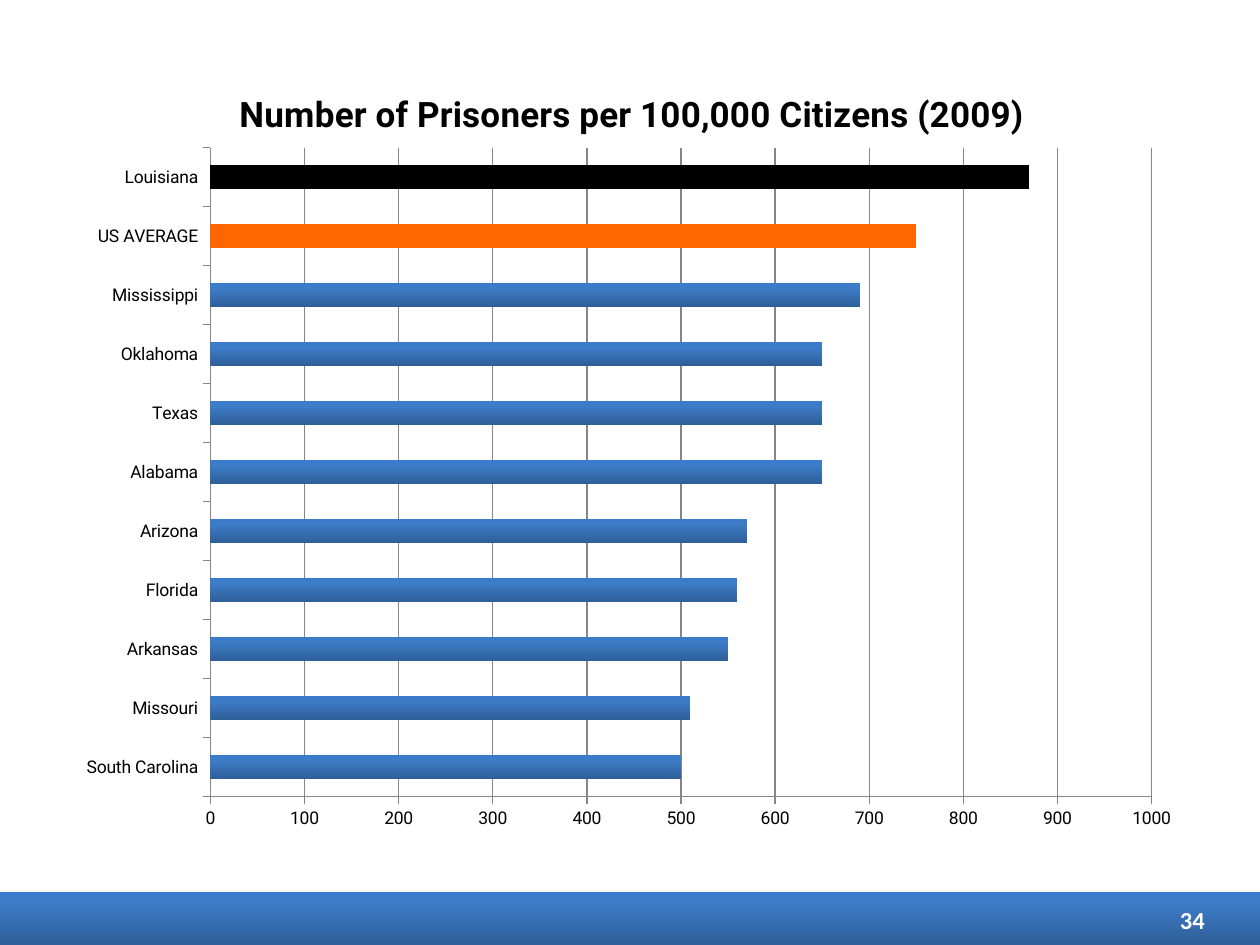
import typing

import pptx
import pptx.chart.data
import pptx.dml.color
import pptx.enum.chart
import pptx.enum.shapes
import pptx.enum.text
import pptx.oxml
import pptx.oxml.ns
import pptx.util

RGBColor = pptx.dml.color.RGBColor
Inches, Pt = pptx.util.Inches, pptx.util.Pt
qn, nsdecls = pptx.oxml.ns.qn, pptx.oxml.ns.nsdecls

BLACK = RGBColor(0x00, 0x00, 0x00)
WHITE = RGBColor(0xFF, 0xFF, 0xFF)
ORANGE = RGBColor(0xFF, 0x66, 0x00)
GRAY = RGBColor(0x86, 0x86, 0x86)
DEEP_BLUE = RGBColor(0x2F, 0x5F, 0x99)
MID_BLUE = RGBColor(0x3D, 0x7C, 0xC7)
LIGHT_BLUE = RGBColor(0x3A, 0x7C, 0xCB)
BLUE_STOPS = [(0, DEEP_BLUE), (80, MID_BLUE), (100, LIGHT_BLUE)]
FONT = "Roboto"


class StateRate(typing.NamedTuple):
    name: str
    prisoners: int
    color: typing.Optional[RGBColor] = None


# Listed from the bottom bar to the top bar
RATES = [
    StateRate("South Carolina", 500),
    StateRate("Missouri", 510),
    StateRate("Arkansas", 550),
    StateRate("Florida", 560),
    StateRate("Arizona", 570),
    StateRate("Alabama", 650),
    StateRate("Texas", 650),
    StateRate("Oklahoma", 650),
    StateRate("Mississippi", 690),
    StateRate("US AVERAGE", 750, ORANGE),
    StateRate("Louisiana", 870, BLACK),
]


def fill_blue_gradient(fill, spPr) -> None:
    """Vertical three-stop gradient, dark at the bottom."""
    fill.gradient()
    fill.gradient_angle = 90
    stops = spPr.find(qn("a:gradFill")).find(qn("a:gsLst"))
    for gs in list(stops):
        stops.remove(gs)
    for pos, color in BLUE_STOPS:
        stops.append(pptx.oxml.parse_xml(
            f'<a:gs {nsdecls("a")} pos="{pos * 1000}">'
            f'<a:srgbClr val="{color}"/></a:gs>'))


def place(parent, x: float, y: float, w: float = 0, h: float = 0) -> None:
    """Fix a chart part at fractions of the chart area."""
    old = parent.find(qn("c:layout"))
    if old is not None:
        parent.remove(old)
    target = '<c:layoutTarget val="inner"/>' if w else ""
    size = f'<c:w val="{w}"/><c:h val="{h}"/>' if w else ""
    layout = pptx.oxml.parse_xml(
        f'<c:layout {nsdecls("c")}><c:manualLayout>{target}'
        '<c:xMode val="edge"/><c:yMode val="edge"/>'
        f'<c:x val="{x}"/><c:y val="{y}"/>{size}</c:manualLayout></c:layout>')
    text = parent.find(qn("c:tx"))
    if text is not None:
        text.addnext(layout)
    else:
        parent.insert(0, layout)


def style_axis(axis) -> None:
    axis.major_tick_mark = pptx.enum.chart.XL_TICK_MARK.OUTSIDE
    axis.minor_tick_mark = pptx.enum.chart.XL_TICK_MARK.NONE
    axis.format.line.color.rgb = GRAY
    axis.format.line.width = Pt(0.75)


def add_footer(s) -> None:
    sp = s.shapes.add_shape(pptx.enum.shapes.MSO_SHAPE.RECTANGLE,
                            0, Inches(7.08), Inches(10), Inches(0.42))
    spPr = sp._element.spPr
    fill_blue_gradient(sp.fill, spPr)
    sp.line.fill.background()
    sp.shadow.inherit = False
    spPr.find(qn("a:effectLst")).append(pptx.oxml.parse_xml(
        f'<a:outerShdw {nsdecls("a")} blurRad="{Pt(3.1)}" dist="{Pt(1.8)}" '
        'dir="5400000" rotWithShape="0"><a:srgbClr val="000000">'
        '<a:alpha val="35000"/></a:srgbClr></a:outerShdw>'))

    # Slide number
    tf = s.shapes.add_textbox(Inches(7.33), Inches(7.1),
                              Inches(2.33), Inches(0.4)).text_frame
    tf.word_wrap = True
    tf.vertical_anchor = pptx.enum.text.MSO_ANCHOR.MIDDLE
    p = tf.paragraphs[0]
    p.alignment = pptx.enum.text.PP_ALIGN.RIGHT
    r = p.add_run()
    r.text = "34"
    r.font.name, r.font.size, r.font.bold = "Calibri", Pt(14), True
    r.font.color.rgb = WHITE


def add_prisoner_chart(s) -> None:
    data = pptx.chart.data.CategoryChartData()
    data.categories = [rate.name for rate in RATES]
    data.add_series("Series 1", [rate.prisoners for rate in RATES])
    chart = s.shapes.add_chart(
        pptx.enum.chart.XL_CHART_TYPE.BAR_CLUSTERED, Inches(0.5), Inches(0.42),
        Inches(9), Inches(6.28), data).chart
    chart.has_legend = False
    chart.font.name, chart.font.size = FONT, Pt(10)
    chart.font.color.rgb = BLACK

    # Title
    chart.has_title = True
    r = chart.chart_title.text_frame.paragraphs[0].add_run()
    r.text = "Number of Prisoners per 100,000 Citizens (2009)"
    r.font.name, r.font.size, r.font.bold = FONT, Pt(20), True
    r.font.color.rgb = BLACK
    place(chart.chart_title._element, 0.15, 0.04)

    # Axes
    style_axis(chart.category_axis)
    axis = chart.value_axis
    style_axis(axis)
    axis.minimum_scale, axis.maximum_scale, axis.major_unit = 0, 1000, 100
    axis.has_major_gridlines = True
    axis.major_gridlines.format.line.color.rgb = GRAY
    axis.major_gridlines.format.line.width = Pt(0.75)

    # Bars, with the highlighted ones in their own colours
    plot = chart.plots[0]
    plot.gap_width = 150
    plot.vary_by_categories = False
    series = plot.series[0]
    series.invert_if_negative = False
    fill_blue_gradient(series.format.fill, series._element.spPr)
    for i, rate in enumerate(RATES):
        if rate.color is not None:
            fill = series.points[i].format.fill
            fill.solid()
            fill.fore_color.rgb = rate.color
    place(chart._chartSpace.chart.plotArea, 0.13, 0.12, 0.83, 0.82)


def main() -> None:
    prs = pptx.Presentation()
    prs.slide_width, prs.slide_height = Inches(10), Inches(7.5)
    s = prs.slides.add_slide(prs.slide_layouts[6])
    add_footer(s)
    add_prisoner_chart(s)
    prs.save("out.pptx")


if __name__ == "__main__":
    main()
